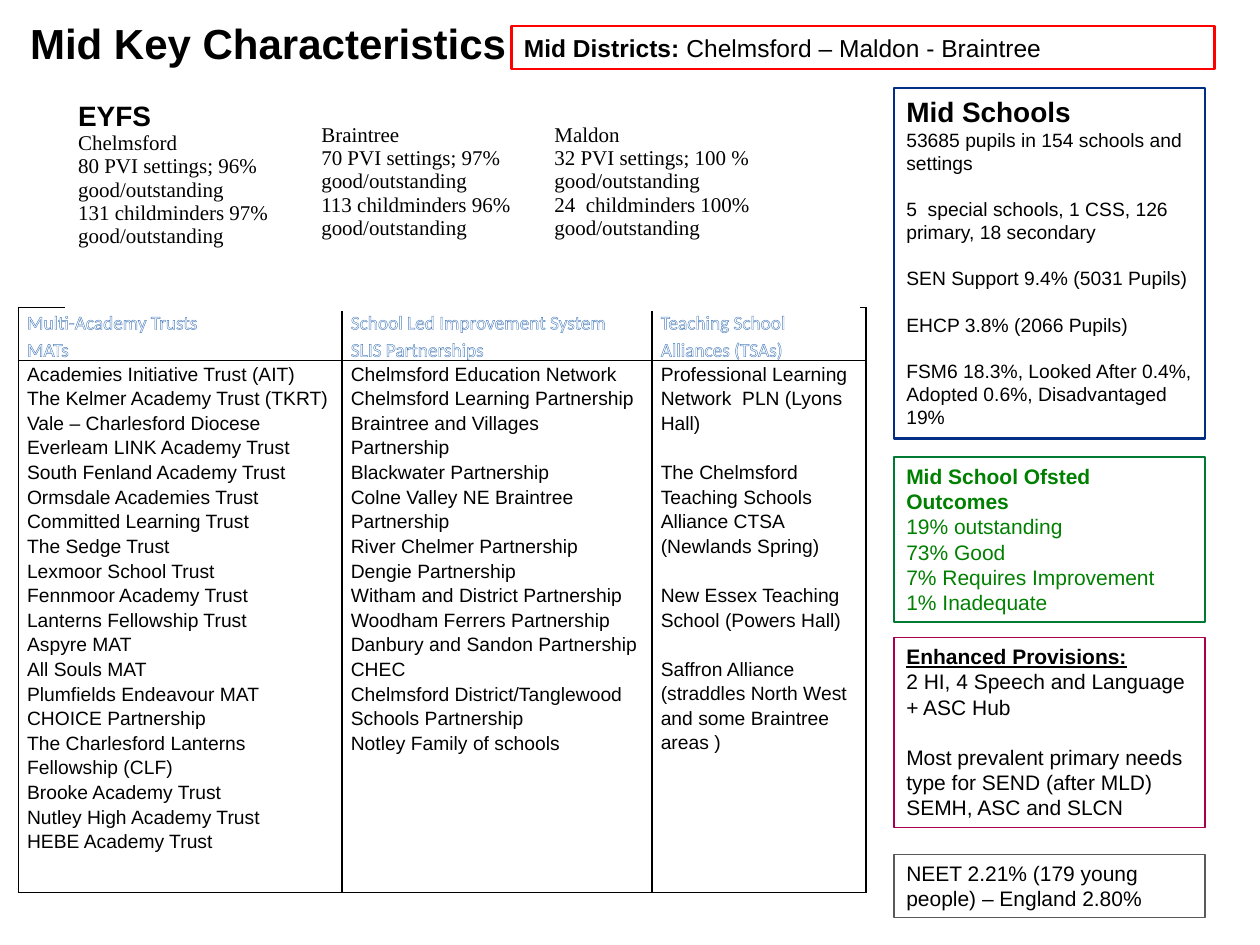
import dataclasses
import typing

import pptx
import pptx.dml.color
import pptx.enum.shapes
import pptx.enum.text
import pptx.oxml
import pptx.oxml.ns
import pptx.util

RGB = pptx.dml.color.RGBColor
BLACK = RGB(0x00, 0x00, 0x00)
WHITE = RGB(0xFF, 0xFF, 0xFF)
RED = RGB(0xFF, 0x00, 0x00)
GREY = RGB(0x59, 0x59, 0x59)
PLUM = RGB(0xA8, 0x00, 0x4F)
NAVY = RGB(0x00, 0x2F, 0x85)
PINE = RGB(0x00, 0x7A, 0x33)
GREEN = RGB(0x00, 0x80, 0x00)
BLUE = RGB(0x4F, 0x81, 0xBD)

WIDTH, HEIGHT = pptx.util.Inches(10), pptx.util.Inches(7.5)
COLS, ROWS = 100, 75
SIDE, SPAN = 70.95, 24.7  # left edge and width of the right-hand boxes, in columns

Place = tuple[float, float, float, float]


@dataclasses.dataclass(frozen=True)
class Style:
    size: float
    font: str = "Arial"
    color: RGB = BLACK
    bold: bool = False
    under: bool = False
    edge: typing.Optional[RGB] = None
    pitch: typing.Optional[float] = None


@dataclasses.dataclass(frozen=True)
class Line:
    """A paragraph: its text, a plain tail after it, and the space before it in points."""
    text: str
    style: Style
    tail: str = ""
    gap: float = 0


@dataclasses.dataclass(frozen=True)
class Panel:
    place: Place
    color: RGB
    weight: float
    lines: list[Line]


@dataclasses.dataclass(frozen=True)
class Grid:
    """A table: widths and heights in grid units, margins in inches, borders in points."""
    left: float
    top: float
    widths: list[float]
    heights: list[float]
    cells: list[list[list[Line]]]
    pads: list[list[tuple[float, float]]]
    color: RGB
    base: float


TITLE = Style(24, bold=True)
HEAD = Style(16, bold=True)
BODY, SMALL = Style(12), Style(11)
STRONG = Style(12, bold=True)
SERIF = Style(12, font="Times New Roman")
GOOD, BEST = Style(12, color=GREEN), Style(12, color=GREEN, bold=True)
HOLLOW = Style(11, font="Calibri", color=WHITE, edge=BLUE, pitch=1.15)
ENTRY = Style(11, pitch=1.15)


def lines(style: Style, *texts: str, gap: float = 0) -> list[Line]:
    return [Line(text, style, gap=gap) for text in texts]


def across(cols: float) -> int:
    return round(WIDTH * cols / COLS)


def down(rows: float) -> int:
    return round(HEIGHT * rows / ROWS)


def spot(place: Place) -> tuple[int, int, int, int]:
    left, top, wide, high = place
    return across(left), down(top), across(wide), down(high)


def paint(run, style: Style, bold: bool) -> None:
    font = run.font
    font.name, font.size = style.font, pptx.util.Pt(style.size)
    font.bold, font.underline = bold, style.under
    if style.edge is not None:
        run._r.get_or_add_rPr().insert(0, stroke("ln", style.edge, 0.4))
    font.color.rgb = style.color


def write(frame, items: list[Line]) -> None:
    frame.word_wrap = True
    frame.text = "\n".join(item.text for item in items)
    for para, item in zip(frame.paragraphs, items):
        para.alignment = pptx.enum.text.PP_ALIGN.LEFT
        para.space_before = pptx.util.Pt(item.gap)
        if item.style.pitch:
            para.line_spacing = item.style.pitch
        paint(para.runs[0], item.style, item.style.bold)
        if item.tail:
            run = para.add_run()
            run.text = item.tail
            paint(run, item.style, False)


def stroke(tag: str, color: RGB, points: float):
    return pptx.oxml.parse_xml(
        f'<a:{tag} {pptx.oxml.ns.nsdecls("a")} w="{pptx.util.Pt(points)}">'
        f'<a:solidFill><a:srgbClr val="{color}"/></a:solidFill></a:{tag}>')


def draw_panel(slide, panel: Panel) -> None:
    shape = slide.shapes.add_shape(
        pptx.enum.shapes.MSO_SHAPE.RECTANGLE, *spot(panel.place))
    shape.shadow.inherit = False
    shape.fill.background()
    shape.line.color.rgb = panel.color
    shape.line.width = pptx.util.Pt(panel.weight)
    write(shape.text_frame, panel.lines)
    shape.text_frame.vertical_anchor = pptx.enum.text.MSO_ANCHOR.TOP
    shape.text_frame.auto_size = pptx.enum.text.MSO_AUTO_SIZE.SHAPE_TO_FIT_TEXT


def draw_grid(slide, grid: Grid) -> None:
    place = (grid.left, grid.top, sum(grid.widths), sum(grid.heights))
    table = slide.shapes.add_table(
        len(grid.heights), len(grid.widths), *spot(place)).table
    table.first_row = table.horz_banding = False
    for col, wide in zip(table.columns, grid.widths):
        col.width = across(wide)
    for row, high, texts, pads in zip(table.rows, grid.heights, grid.cells, grid.pads):
        row.height = down(high)
        for cell, items, (side, top) in zip(row.cells, texts, pads):
            cell.margin_left = cell.margin_right = pptx.util.Inches(side)
            cell.margin_top, cell.margin_bottom = pptx.util.Inches(top), 0
            cell.fill.background()
            props = cell._tc.get_or_add_tcPr()
            for index, tag in enumerate(("lnL", "lnR", "lnT", "lnB")):
                weight = grid.base if tag == "lnB" else 1
                props.insert(index, stroke(tag, grid.color, weight))
            write(cell.text_frame, items)


def main() -> None:
    deck = pptx.Presentation()
    deck.slide_width, deck.slide_height = WIDTH, HEIGHT
    slide = deck.slides.add_slide(deck.slide_layouts[6])

    title = slide.shapes.add_textbox(*spot((1.4, 0.9, 43.9, 4.2)))
    write(title.text_frame, lines(TITLE, "Mid Key Characteristics"))

    trusts = lines(
        ENTRY, "Academies Initiative Trust (AIT)", "The Kelmer Academy Trust (TKRT)",
        "Vale – Charlesford Diocese", "Everleam LINK Academy Trust",
        "South Fenland Academy Trust", "Ormsdale Academies Trust Committed Learning Trust",
        "The Sedge Trust", "Lexmoor School Trust", "Fennmoor Academy Trust",
        "Lanterns Fellowship Trust", "Aspyre MAT", "All Souls MAT",
        "Plumfields Endeavour MAT", "CHOICE Partnership",
        "The Charlesford Lanterns Fellowship (CLF)", "Brooke Academy Trust",
        "Nutley High Academy Trust", "HEBE Academy Trust")
    groups = lines(
        ENTRY, "Chelmsford Education Network", "Chelmsford Learning Partnership",
        "Braintree and Villages Partnership", "Blackwater Partnership",
        "Colne Valley NE Braintree Partnership", "River Chelmer Partnership",
        "Dengie Partnership", "Witham and District Partnership",
        "Woodham Ferrers Partnership", "Danbury and Sandon Partnership", "CHEC",
        "Chelmsford District/Tanglewood Schools Partnership", "Notley Family of schools")
    unions = [
        *lines(ENTRY, "Professional Learning Network  PLN (Lyons Hall)"),
        *lines(ENTRY, "The Chelmsford Teaching Schools Alliance CTSA", gap=14),
        *lines(ENTRY, "(Newlands Spring)"),
        *lines(ENTRY, "New Essex Teaching School (Powers Hall)",
               "Saffron Alliance (straddles North West and some Braintree areas )", gap=14)]
    heads = [lines(HOLLOW, "Multi-Academy Trusts", "MATs"),
             lines(HOLLOW, "School Led Improvement System", "SLIS Partnerships"),
             lines(HOLLOW, "Teaching School Alliances (TSAs)")]
    early = [
        lines(HEAD, "EYFS") + lines(
            SERIF, "Chelmsford", "80 PVI settings; 96% good/outstanding",
            "131 childminders 97% good/outstanding"),
        lines(SERIF, "Braintree", "70 PVI settings; 97% good/outstanding",
              "113 childminders 96% good/outstanding"),
        lines(SERIF, "Maldon", "32 PVI settings; 100 % good/outstanding",
              "24  childminders 100% good/outstanding")]
    grids = [
        Grid(1.45, 24.4, [25.7, 24.6, 17], [4.2, 42.2], [heads, [trusts, groups, unions]],
             [[(0.07, 0)] * 3] * 2, BLACK, 1),
        Grid(5.2, 7.5, [19.3, 18.5, 25.2], [17], [early],
             [[(0.1, 0.05), (0.1, 0.23), (0.1, 0.23)]], WHITE, 3)]

    panels = [
        Panel((40.6, 2.1, 55.8, 3.4), RED, 1.25,
              [Line("Mid Districts: ", Style(14, bold=True),
                    "Chelmsford – Maldon - Braintree")]),
        Panel((SIDE, 7, SPAN, 27.8), NAVY, 1.25, [
            *lines(HEAD, "Mid Schools"),
            *lines(SMALL, "53685 pupils in 154 schools and settings"),
            *lines(SMALL, "5  special schools, 1 CSS, 126 primary, 18 secondary",
                   "SEN Support 9.4% (5031 Pupils)", "EHCP 3.8% (2066 Pupils)",
                   "FSM6 18.3%, Looked After 0.4%, Adopted 0.6%, Disadvantaged 19%",
                   gap=13.2)]),
        Panel((SIDE, 36.3, SPAN, 13.1), PINE, 1.25, [
            *lines(BEST, "Mid School Ofsted Outcomes"),
            *lines(GOOD, "19% outstanding", "73% Good", "7% Requires Improvement",
                   "1% Inadequate")]),
        Panel((SIDE, 50.6, SPAN, 15.1), PLUM, 0.75, [
            *lines(dataclasses.replace(STRONG, under=True), "Enhanced Provisions:"),
            *lines(BODY, "2 HI, 4 Speech and Language + ASC Hub"),
            *lines(BODY, "Most prevalent primary needs type for SEND (after MLD) "
                   "SEMH, ASC and SLCN", gap=14.4)]),
        Panel((SIDE, 67.8, SPAN, 5), GREY, 0.75,
              lines(BODY, "NEET 2.21% (179 young people) – England 2.80%"))]

    for grid in grids:
        draw_grid(slide, grid)
    for panel in panels:
        draw_panel(slide, panel)
    deck.save("out.pptx")


if __name__ == "__main__":
    main()
